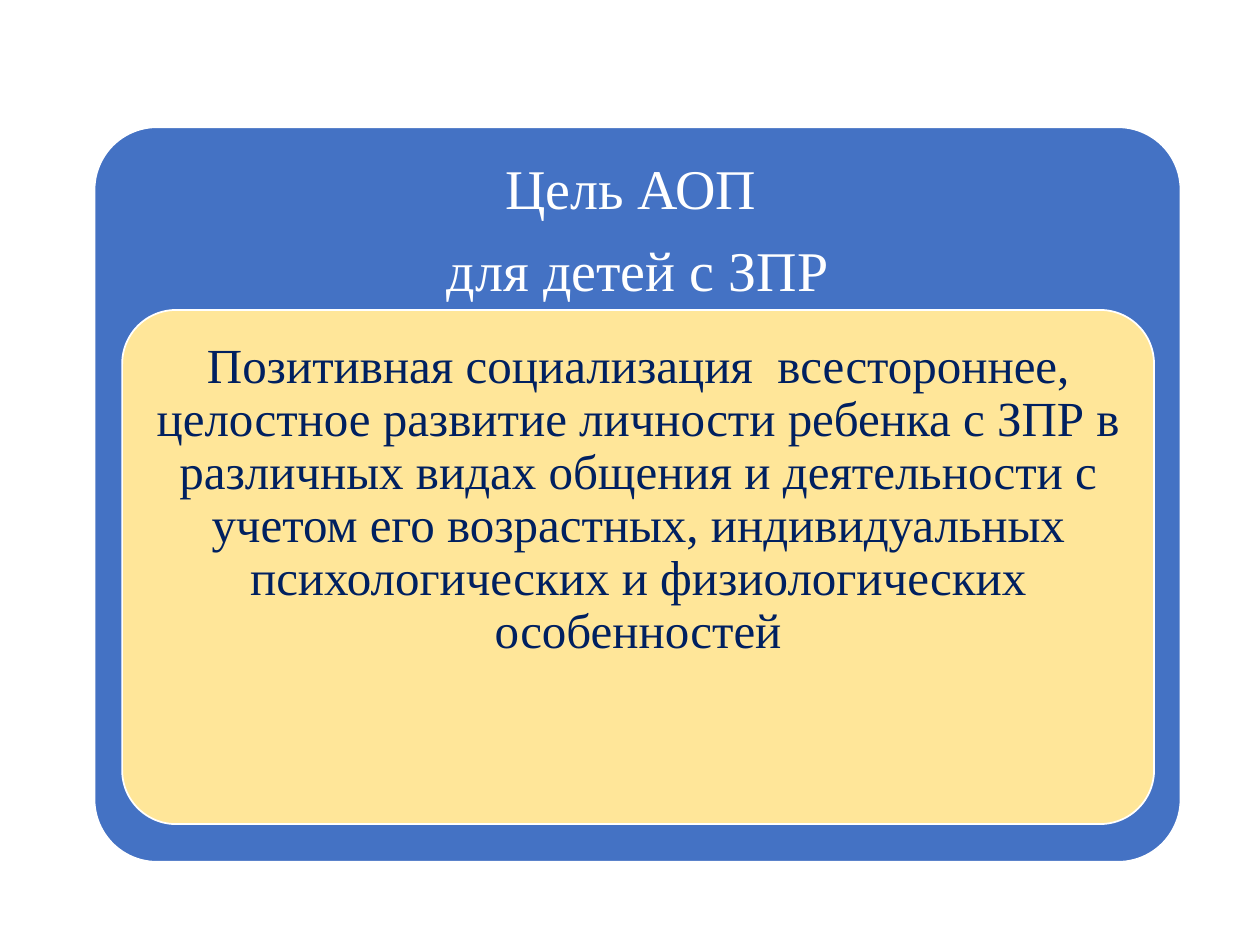
"""Build a slide that states the goal of the programme in two nested panels."""
from pptx import Presentation
from pptx.dml.color import RGBColor
from pptx.enum.shapes import MSO_SHAPE
from pptx.enum.text import MSO_ANCHOR, MSO_AUTO_SIZE, PP_ALIGN
from pptx.util import Pt

ROUNDED = MSO_SHAPE.ROUNDED_RECTANGLE
TOP = MSO_ANCHOR.TOP
NO_FIT = MSO_AUTO_SIZE.NONE
CENTER = PP_ALIGN.CENTER

WHITE = RGBColor(0xFF, 0xFF, 0xFF)
BLUE = RGBColor(0x44, 0x72, 0xC4)
CREAM = RGBColor(0xFF, 0xE6, 0x99)
NAVY = RGBColor(0x00, 0x20, 0x60)
FONT = "Times New Roman"

HEADING = ["Цель АОП ", "для детей с ЗПР"]
GOAL = [
    "Позитивная социализация  всестороннее, целостное развитие личности "
    "ребенка с ЗПР в различных видах общения и деятельности с учетом его "
    "возрастных, индивидуальных психологических и физиологических особенностей"
]


def write_text(holder, lines, *, size, color, inset=0, space_after=0):
    """Fill a holder with centred paragraphs that start at its top."""
    frame = holder.text_frame
    frame.word_wrap = True
    frame.auto_size = NO_FIT
    frame.vertical_anchor = TOP
    frame.margin_left = frame.margin_right = Pt(inset)
    frame.margin_top = frame.margin_bottom = Pt(inset)
    for index, line in enumerate(lines):
        paragraph = frame.add_paragraph() if index else frame.paragraphs[0]
        paragraph.alignment = CENTER
        paragraph.line_spacing = 0.9
        paragraph.space_before = Pt(0)
        paragraph.space_after = Pt(space_after)
        run = paragraph.add_run()
        run.text = line
        run.font.name = FONT
        run.font.size = Pt(size)
        run.font.color.rgb = color


def add_panel(slide, left, top, width, height, *, fill, rounding):
    """Add a rounded panel with a thin white outline."""
    panel = slide.shapes.add_shape(
        ROUNDED, Pt(left), Pt(top), Pt(width), Pt(height))
    panel.adjustments[0] = rounding
    panel.shadow.inherit = False
    panel.fill.solid()
    panel.fill.fore_color.rgb = fill
    panel.line.color.rgb = WHITE
    panel.line.width = Pt(1)
    return panel


def place_heading(slide):
    """Put the title placeholder in front of the outer panel."""
    heading = slide.shapes.title
    heading.left, heading.top = Pt(74), Pt(92)
    heading.width, heading.height = Pt(581), Pt(84)
    write_text(heading, HEADING, size=32, color=WHITE, space_after=12.5)
    slide.shapes._spTree.append(heading._element)


def main():
    """Build and save the slide."""
    deck = Presentation()
    deck.slide_width, deck.slide_height = Pt(720), Pt(540)
    slide = deck.slides.add_slide(deck.slide_layouts[5])
    add_panel(slide, 54, 72.7, 620.6, 419.8, fill=BLUE, rounding=0.085)
    place_heading(slide)
    goal_panel = add_panel(
        slide, 69.8, 177.1, 589.7, 293.8, fill=CREAM, rounding=0.105)
    write_text(goal_panel, GOAL, size=28, color=NAVY, inset=8.8)
    deck.save("out.pptx")


if __name__ == "__main__":
    main()
